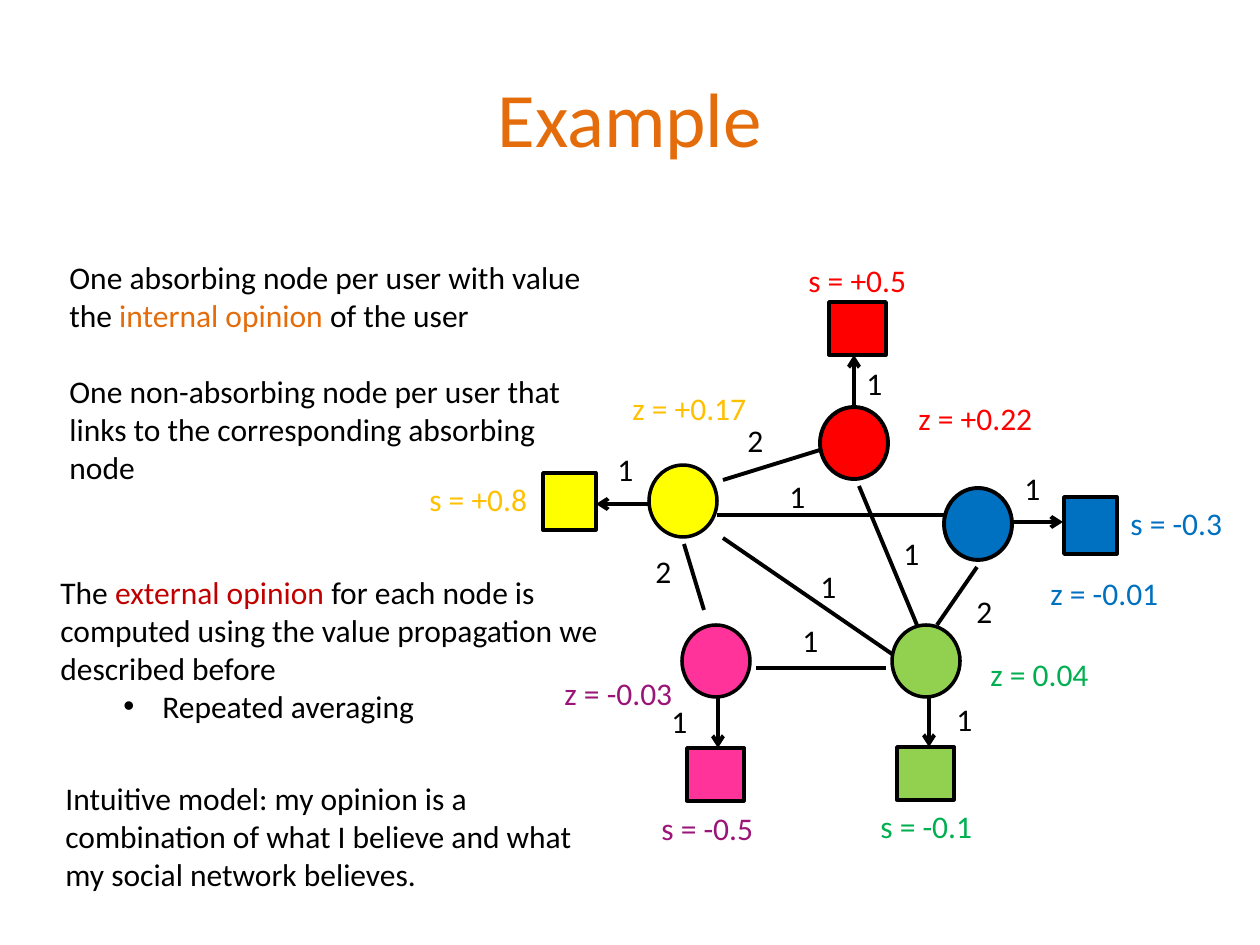
import pptx
import pptx.util
import pptx.dml.color
import pptx.enum.shapes
import pptx.enum.text
import pptx.oxml.ns
import lxml.etree

RGBColor = pptx.dml.color.RGBColor
Shape = pptx.enum.shapes.MSO_SHAPE
SCALE = 914400 / 126
FONT = "Calibri"
BLACK = RGBColor(0x00, 0x00, 0x00)
ORANGE = RGBColor(0xE4, 0x6C, 0x0A)
DARK_RED = RGBColor(0xC0, 0x00, 0x00)
RED = RGBColor(0xFF, 0x00, 0x00)
BLUE = RGBColor(0x00, 0x70, 0xC0)
LIME = RGBColor(0x92, 0xD0, 0x50)
GREEN = RGBColor(0x00, 0xB0, 0x50)
PINK = RGBColor(0xFF, 0x33, 0x99)
PURPLE = RGBColor(0x9B, 0x15, 0x78)
YELLOW = RGBColor(0xFF, 0xFF, 0x00)
GOLD = RGBColor(0xFF, 0xC0, 0x00)

EDGES = [
    (756, 668, 886, 668), (704, 610, 684, 544), (723, 480, 820, 450),
    (717, 515, 944, 515), (917, 625, 859, 486), (937, 625, 977, 567),
    (892, 654, 723, 538),
]
WEIGHTS = [
    ("2", 735, 415), ("2", 643, 546), ("1", 777, 471), ("1", 808, 561),
    ("1", 790, 615), ("2", 964, 586), ("1", 891, 528), ("1", 854, 358),
    ("1", 605, 444), ("1", 659, 696), ("1", 944, 694), ("1", 1012, 463),
]
USERS = [
    (RED, 2.25, (820, 407), (829, 302, 57, 53), (854, 407, 854, 355)),
    (BLUE, 2.25, (944, 488), (1064, 497, 53, 57), (1012, 522, 1063, 522)),
    (LIME, 2, (892, 625), (897, 747, 57, 53), (929, 696, 929, 747)),
    (PINK, 2, (682, 625), (687, 748, 57, 53), (718, 697, 718, 748)),
    (YELLOW, 2, (649, 465), (543, 473, 53, 57), (648, 504, 596, 504)),
]
OPINIONS = [
    ("s = +0.5", RED, 796, 255, 126), ("z = +0.22", RED, 906, 393, 141),
    ("s = -0.3", BLUE, 1118, 498, 118), ("z = -0.01", BLUE, 1038, 568, 135),
    ("s = -0.1", GREEN, 868, 801, 118), ("z = 0.04", GREEN, 978, 649, 125),
    ("s = -0.5", PURPLE, 649, 803, 118), ("z = -0.03", PURPLE, 552, 668, 135),
    ("s = +0.8", GOLD, 417, 474, 125), ("z = +0.17", GOLD, 620, 383, 141),
]


def px(*lengths):
    """Turn pixel lengths into EMU."""
    return [pptx.util.Emu(round(length * SCALE)) for length in lengths]


def add_text(page, area, paragraphs, size=18, wrap=True):
    """Add a text box whose paragraphs are lists of (text, colour) runs."""
    box = page.shapes.add_textbox(*px(*area))
    frame = box.text_frame
    frame.word_wrap = wrap
    for index, spans in enumerate(paragraphs):
        para = frame.paragraphs[0] if index == 0 else frame.add_paragraph()
        for text, color in spans:
            span = para.add_run()
            span.text = text
            span.font.name = FONT
            span.font.size = pptx.util.Pt(size)
            span.font.color.rgb = color
    return frame


def add_bullet(para, margin, hanging):
    """Give a paragraph a hanging round bullet."""
    para.level = 1
    properties = para._p.get_or_add_pPr()
    left, indent = px(margin, hanging)
    properties.set("marL", str(left))
    properties.set("indent", str(-indent))
    for tag, key, value in (("a:buFont", "typeface", "Arial"), ("a:buChar", "char", "•")):
        lxml.etree.SubElement(properties, pptx.oxml.ns.qn(tag)).set(key, value)


def add_line(page, ends, arrow=False):
    """Draw a straight black line, optionally with an arrowhead at its end."""
    line = page.shapes.add_connector(pptx.enum.shapes.MSO_CONNECTOR.STRAIGHT, *px(*ends))
    line.line.color.rgb = BLACK
    line.line.width = pptx.util.Pt(2.25)
    if arrow:
        stroke = line.line._get_or_add_ln()
        lxml.etree.SubElement(stroke, pptx.oxml.ns.qn("a:tailEnd")).set("type", "arrow")
    lxml.etree.SubElement(line._element.spPr, pptx.oxml.ns.qn("a:effectLst"))


def add_node(page, kind, area, color, weight):
    """Draw a filled graph node with a black outline."""
    node = page.shapes.add_shape(kind, *px(*area))
    node.shadow.inherit = False
    node.fill.solid()
    node.fill.fore_color.rgb = color
    node.line.color.rgb = BLACK
    node.line.width = pptx.util.Pt(weight)


def add_graph(page):
    """Draw the opinion network with its weights and values."""
    for ends in EDGES:
        add_line(page, ends)
    for color, weight, corner, square, ends in USERS:
        add_line(page, ends, arrow=True)
        add_node(page, Shape.OVAL, (*corner, 68, 72), color, weight)
        add_node(page, Shape.RECTANGLE, square, color, 2)
    for text, left, top in WEIGHTS:
        add_text(page, (left, top, 43, 50), [[(text, BLACK)]], wrap=False)
    for text, color, left, top, width in OPINIONS:
        add_text(page, (left, top, width, 50), [[(text, color)]], wrap=False)


def add_notes(page):
    """Write the three explanations beside the graph."""
    nodes = add_text(page, (57, 252, 537, 242), [
        [("One absorbing node per user with value the", BLACK),
         (" internal opinion ", ORANGE), ("of the user", BLACK)],
        [("One non-absorbing node per user that links to the "
          "corresponding absorbing node", BLACK)],
    ])
    nodes.paragraphs[1].space_before = pptx.util.Pt(22)
    external = add_text(page, (48, 567, 570, 165), [
        [("The ", BLACK), ("external opinion ", DARK_RED),
         ("for each node is computed using the value propagation "
          "we described before", BLACK)],
        [("Repeated averaging", BLACK)],
    ])
    add_bullet(external.paragraphs[1], 102, 39)
    add_text(page, (53, 773, 558, 127), [
        [("Intuitive model: my opinion is a combination of what I believe "
          "and what my social network believes.", BLACK)],
    ])


def main():
    """Build the slide and save it."""
    deck = pptx.Presentation()
    deck.slide_width, deck.slide_height = px(1260, 945)
    page = deck.slides.add_slide(deck.slide_layouts[6])
    title = add_text(page, (63, 38, 1134, 157), [[("Example", ORANGE)]], size=44)
    title.vertical_anchor = pptx.enum.text.MSO_ANCHOR.MIDDLE
    title.paragraphs[0].alignment = pptx.enum.text.PP_ALIGN.CENTER
    add_graph(page)
    add_notes(page)
    deck.save("out.pptx")


if __name__ == "__main__":
    main()
